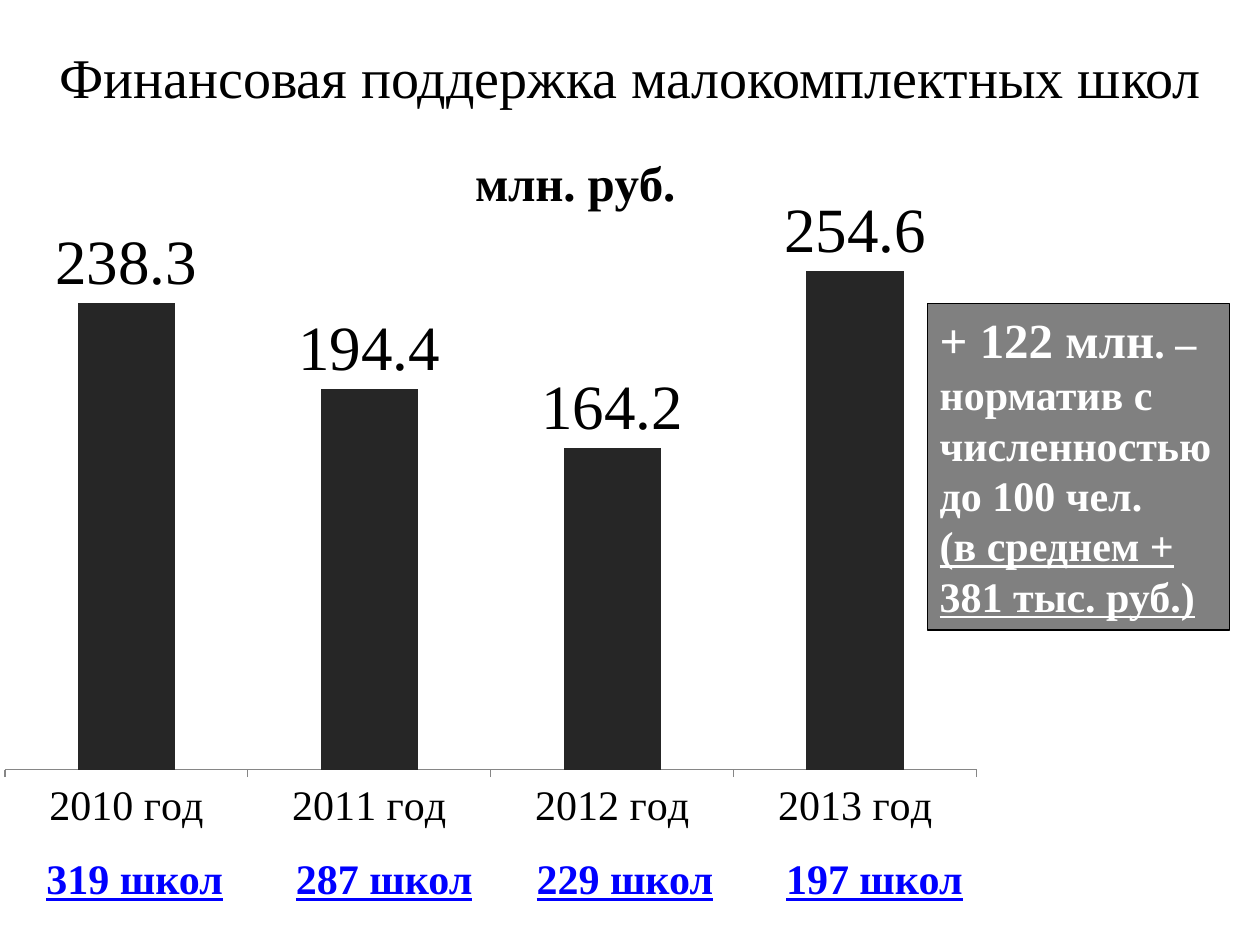
import pptx
import pptx.chart.data
import pptx.dml.color
import pptx.enum.chart as ec
import pptx.enum.shapes
import pptx.enum.text as et
import pptx.util
from lxml import etree

Inches, Pt = pptx.util.Inches, pptx.util.Pt
FACE = "Times New Roman"

# Content
TITLE = "Финансовая поддержка малокомплектных школ"
UNIT = "млн. руб."
YEARS = ["2010 год", "2011 год", "2012 год", "2013 год"]
SUMS = [238.3, 194.4, 164.2, 254.6]
SCHOOLS = ["319 школ", "287 школ", "229 школ", "197 школ"]
TABS = [1.98, 3.89, 5.87]
NOTE = [
    [("+ 122 млн", 28), (". – норматив с численностью до 100 чел.", 24)],
    [("(в среднем + 381 тыс. руб.)", 24)],
]
PLOT = {"x": 0.017, "y": 0.082, "w": 0.823, "h": 0.812}


def rgb(code):
    return pptx.dml.color.RGBColor.from_string(code)


def style(font, size, color="000000", bold=False, under=False):
    font.name, font.size, font.bold = FACE, Pt(size), bold
    font.underline = under
    font.color.rgb = rgb(color)


def box(left, top, width, height):
    return [Inches(n) for n in (left, top, width, height)]


deck = pptx.Presentation()
deck.slide_width, deck.slide_height = Inches(10), Inches(7.5)
slide = deck.slides.add_slide(deck.slide_layouts[6])
shapes = slide.shapes

# Title
frame = shapes.add_textbox(*box(0.28, 0.3, 9.45, 0.61)).text_frame
frame.word_wrap = True
frame.vertical_anchor = et.MSO_ANCHOR.MIDDLE
para = frame.paragraphs[0]
para.text, para.alignment = TITLE, et.PP_ALIGN.CENTER
style(para.font, 32)

# Column chart
data = pptx.chart.data.CategoryChartData()
data.categories = YEARS
data.add_series(UNIT, SUMS)
chart = shapes.add_chart(ec.XL_CHART_TYPE.COLUMN_CLUSTERED,
                         *box(-0.12, 0.97, 9.37, 5.75), data).chart
chart.has_legend = False
chart.font.name, chart.font.size = "Calibri", Pt(18)
chart.has_title = True
head = chart.chart_title.text_frame.paragraphs[0]
head.text = UNIT
style(head.font, 28, bold=True)

plot = chart.plots[0]
plot.gap_width, plot.vary_by_categories = 150, False
fill = plot.series[0].format.fill
fill.solid()
fill.fore_color.rgb = rgb("262626")
plot.has_data_labels = True
labels = plot.data_labels
labels.show_value = True
labels.position = ec.XL_LABEL_POSITION.OUTSIDE_END
style(labels.font, 36)

axis = chart.category_axis
axis.major_tick_mark = ec.XL_TICK_MARK.OUTSIDE
axis.format.line.color.rgb = rgb("868686")
style(axis.tick_labels.font, 24)
scale = chart.value_axis
scale.visible = scale.has_major_gridlines = False
scale.minimum_scale, scale.maximum_scale = 0, 300

# Fixed inner plot area
area = chart._chartSpace.chart.plotArea
space = "{" + area.nsmap["c"] + "}"
for old in area.findall(space + "layout"):
    area.remove(old)
layout = etree.Element(space + "layout")
manual = etree.SubElement(layout, space + "manualLayout")
parts = [("layoutTarget", "inner"), ("xMode", "edge"), ("yMode", "edge")]
for tag, val in parts + list(PLOT.items()):
    etree.SubElement(manual, space + tag, val=str(val))
area.insert(0, layout)

# School counts on tab stops under the columns
frame = shapes.add_textbox(*box(0.27, 6.72, 7.8, 0.5)).text_frame
frame.word_wrap = True
para = frame.paragraphs[0]
para.text = "\t".join(SCHOOLS)
style(para.font, 24, "0000FF", True, True)
props = para._p.get_or_add_pPr()
stops = etree.Element("{" + props.nsmap["a"] + "}tabLst")
for stop in TABS:
    etree.SubElement(stops, "{" + props.nsmap["a"] + "}tab",
                     pos=str(Inches(stop)), algn="l")
props.insert(0, stops)

# Note panel
note = shapes.add_shape(pptx.enum.shapes.MSO_SHAPE.RECTANGLE,
                        *box(7.36, 2.41, 2.4, 2.59))
note.shadow.inherit = False
note.fill.solid()
note.fill.fore_color.rgb = rgb("808080")
note.line.color.rgb, note.line.width = rgb("000000"), Pt(0.75)
frame = note.text_frame
frame.word_wrap = True
frame.vertical_anchor = et.MSO_ANCHOR.TOP
for i, runs in enumerate(NOTE):
    para = frame.add_paragraph() if i else frame.paragraphs[0]
    para.alignment = et.PP_ALIGN.LEFT
    for text, size in runs:
        run = para.add_run()
        run.text = text
        style(run.font, size, "FFFFFF", True, i == 1)

deck.save("out.pptx")
